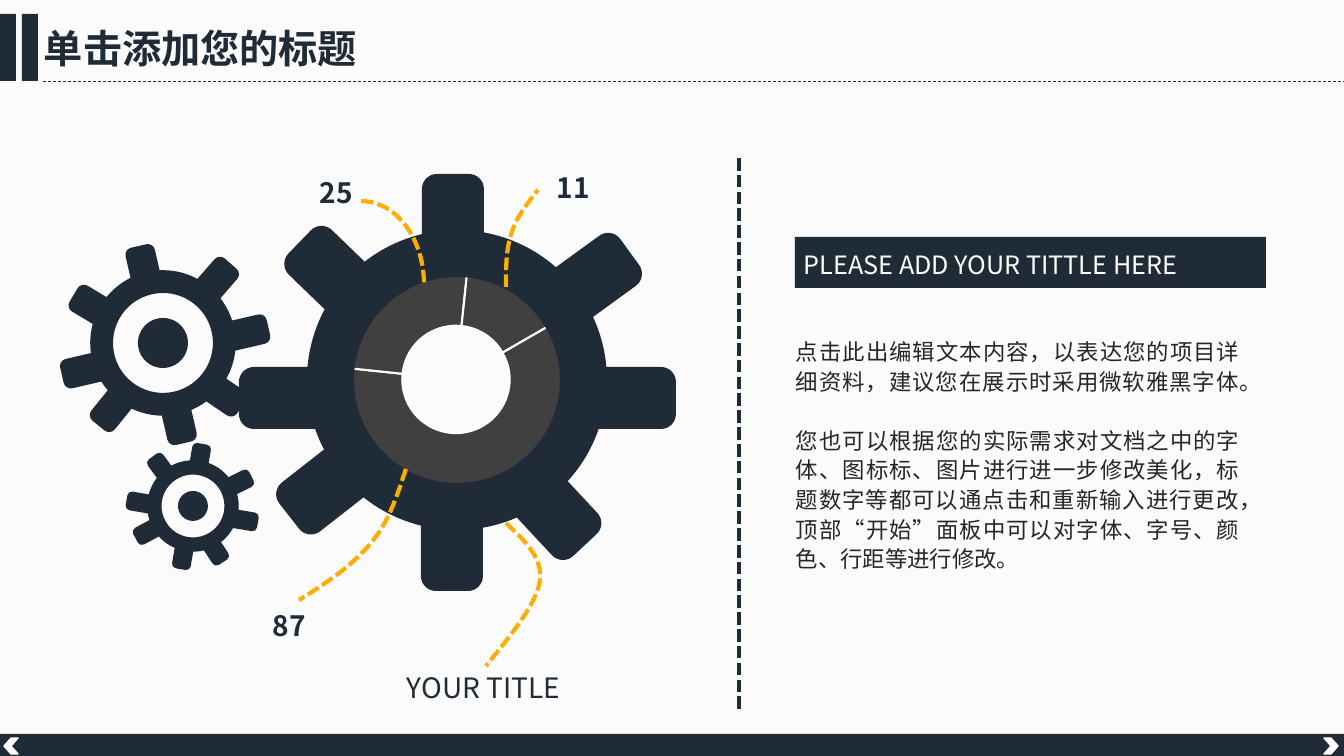
from math import atan2, cos, pi, radians, sin, sqrt, tan

from lxml.etree import SubElement
from pptx import Presentation
from pptx.chart.data import CategoryChartData
from pptx.dml.color import RGBColor
from pptx.enum.chart import XL_CHART_TYPE as Chart
from pptx.enum.dml import MSO_LINE as Dash
from pptx.enum.shapes import MSO_CONNECTOR as Connector, MSO_SHAPE as Shape
from pptx.enum.text import MSO_AUTO_SIZE as AutoSize, PP_ALIGN as Align
from pptx.oxml import parse_xml
from pptx.oxml.ns import nsdecls, qn
from pptx.util import Pt

# Content: lengths in px, 1344 x 756 for the slide
WIDTH, HEIGHT = 1344, 756
PX = 914400 / 100.8
FONT = "Noto Sans CJK SC"
COLORS = {"page": "FBFBFB", "navy": "1F2B37", "amber": "FBAE03",
          "ring": "404040", "white": "FFFFFF", "body": "262626", "black": "000000"}

TITLE = "单击添加您的标题"
HEADING = "PLEASE ADD YOUR TITTLE HERE"
BODY = [
    "点击此出编辑文本内容，以表达您的项目详细资料，建议您在展示时采用微软雅黑字体。",
    "您也可以根据您的实际需求对文档之中的字体、图标标、图片进行进一步修改美化，"
    "标题数字等都可以通点击和重新输入进行更改，顶部“开始”面板中可以对字体、字号、"
    "颜色、行距等进行修改。",
]
LABELS = [("25", 310, 171, 55, True), ("11", 547, 166, 55, True),
          ("87", 263, 604, 55, True), ("YOUR TITLE", 397, 666, 178, False)]
SHARES = [("1", 60), ("2", 25), ("3", 15)]

# Gear: teeth as (angle, sideways offset, reach); gears as (x, y, scale, turn, hub radius)
BODY_RADIUS, HOLE_RADIUS, HALF_TOOTH, TOOTH_CORNER = 150, 103, 31, 15
TEETH = [(0, 18, 219), (47, 19, 208), (90, 5, 211), (142, -4, 216),
         (180, -18, 218), (224, -10, 209), (270, -4, 206), (324, -2, 215)]
GEARS = [(457, 380, 1, 0, 0), (163, 343, 0.485, -13, 25), (193, 506, 0.305, 9.7, 15)]

# Leader lines: a start, then curves of three points each
LEADERS = [
    [[(506, 287)], [(506, 268), (506, 248), (512, 232)], [(517, 216), (528, 203), (538, 190)]],
    [[(406, 469)], [(397, 496), (389, 522), (371, 543)], [(353, 565), (327, 583), (299, 600)]],
    [[(506, 523)], [(524, 540), (543, 557), (540, 581)], [(536, 605), (511, 635), (486, 666)]],
]


def emu(px):
    return round(px * PX)


def color(name):
    return RGBColor.from_string(COLORS[name])


def paint(shape, fill=None, line=None, width=1, dash=None):
    shape.shadow.inherit = False
    if fill:
        shape.fill.solid()
        shape.fill.fore_color.rgb = color(fill)
    else:
        shape.fill.background()
    if line:
        shape.line.color.rgb = color(line)
        shape.line.width = Pt(width)
        shape.line.dash_style = dash
    else:
        shape.line.fill.background()
    return shape


def add_shape(kind, x, y, w, h, **style):
    return paint(page.shapes.add_shape(kind, emu(x), emu(y), emu(w), emu(h)), **style)


def add_line(x1, y1, x2, y2, width, dash):
    line = page.shapes.add_connector(Connector.STRAIGHT, emu(x1), emu(y1), emu(x2), emu(y2))
    line.line.color.rgb = color("navy")
    line.line.width = Pt(width)
    line.line.dash_style = dash
    SubElement(line._element.spPr, qn("a:effectLst"))


def add_text(paragraphs, x, y, w, h, size, ink="navy", bold=False, wrap=True,
             align=None, spacing=None, gap=0):
    box = page.shapes.add_textbox(emu(x), emu(y), emu(w), emu(h))
    frame = box.text_frame
    frame.word_wrap = wrap
    frame.auto_size = AutoSize.SHAPE_TO_FIT_TEXT
    for index, text in enumerate(paragraphs):
        para = frame.add_paragraph() if index else frame.paragraphs[0]
        para.alignment = align
        para.line_spacing = spacing
        if index:
            para.space_before = Pt(gap)
        span = para.add_run()
        span.text = text
        span.font.name, span.font.size, span.font.bold = FONT, Pt(size), bold
        span.font.color.rgb = color(ink)
        SubElement(span._r.get_or_add_rPr(), qn("a:ea"), typeface=FONT)


def add_outline(contours, close, **style):
    """Each contour is a start, then steps: one point for a line, three for a curve."""
    builder = None
    for contour in contours:
        start, *points = [(emu(x), emu(y)) for step in contour for x, y in step]
        if builder:
            builder.move_to(*start)
        else:
            builder = page.shapes.build_freeform(*start, scale=1.0)
        builder.add_line_segments(points, close=close)
    shape = builder.convert_to_shape()
    # Join the three points of each curve into one Bezier segment
    segments = iter(list(shape._element.iter(qn("a:lnTo"))))
    for step in [step for contour in contours for step in contour[1:]]:
        first, *others = [next(segments) for _ in step]
        if others:
            first.tag = qn("a:cubicBezTo")
            for other in others:
                first.append(other[0])
                other.getparent().remove(other)
    return paint(shape, **style)


def arc(x, y, radius, start, end):
    """Curve step along a circle."""
    pull = radius * 4 / 3 * tan((end - start) / 4)
    x1, y1 = x + radius * cos(start), y + radius * sin(start)
    x2, y2 = x + radius * cos(end), y + radius * sin(end)
    return [(x1 - pull * sin(start), y1 + pull * cos(start)),
            (x2 + pull * sin(end), y2 - pull * cos(end)), (x2, y2)]


def turned(step, angle, x=0, y=0, scale=1):
    c, s = scale * cos(radians(angle)), scale * sin(radians(angle))
    return [(x + u * c - v * s, y + u * s + v * c) for u, v in step]


def tooth(angle, offset, reach):
    """Steps from one foot on the gear body, round the tip, to the other foot."""
    low, high, r = offset - HALF_TOOTH, offset + HALF_TOOTH, TOOTH_CORNER
    steps = [[(sqrt(BODY_RADIUS ** 2 - low ** 2), low)],
             [(reach - r, low)], arc(reach - r, low + r, r, -pi / 2, 0),
             [(reach, high - r)], arc(reach - r, high - r, r, 0, pi / 2),
             [(sqrt(BODY_RADIUS ** 2 - high ** 2), high)]]
    return [turned(step, angle) for step in steps]


def gear_contours():
    teeth = [tooth(*item) for item in TEETH]
    rim = []
    for index, current in enumerate(teeth):
        following = teeth[(index + 1) % len(teeth)]
        (x1, y1), (x2, y2) = current[-1][0], following[0][0]
        start, end = atan2(y1, x1), atan2(y2, x2)
        # The arc before a tooth already ends at its first foot
        rim += current[1:] if index else current
        rim.append(arc(0, 0, BODY_RADIUS, start, start + (end - start) % (2 * pi)))
    quarters = [arc(0, 0, HOLE_RADIUS, -n * pi / 2, -(n + 1) * pi / 2) for n in range(4)]
    return [rim, [[(HOLE_RADIUS, 0)]] + quarters]


def add_ring():
    data = CategoryChartData()
    data.categories = [name for name, _ in SHARES]
    data.add_series("Series 1", [value for _, value in SHARES])
    chart = page.shapes.add_chart(Chart.DOUGHNUT, emu(277), emu(260), emu(358), emu(239), data).chart
    chart.has_legend = chart.has_title = False
    chart.font.name, chart.font.size = FONT, Pt(10)
    chart.font.color.rgb = color("black")
    plot = chart.plots[0]
    plot.vary_by_categories = False
    for index in range(len(SHARES)):
        part = plot.series[0].points[index].format
        part.fill.solid()
        part.fill.fore_color.rgb = color("ring")
        part.line.color.rgb = color("white")
        part.line.width = Pt(1.5)
    ring = plot._element
    ring.find(qn("c:firstSliceAng")).set("val", "60")
    ring.find(qn("c:holeSize")).set("val", "56")
    area = ring.getparent()
    for old in area.findall(qn("c:layout")):
        area.remove(old)
    frame = "".join(f'<c:{key} val="{value}"/>' for key, value in [
        ("layoutTarget", "inner"), ("xMode", "edge"), ("yMode", "edge"),
        ("x", 0.2), ("y", 0.05), ("w", 0.6), ("h", 0.9)])
    area.insert(0, parse_xml(f'<c:layout {nsdecls("c")}><c:manualLayout>{frame}'
                             '</c:manualLayout></c:layout>'))


deck = Presentation()
deck.slide_width, deck.slide_height = emu(WIDTH), emu(HEIGHT)
page = deck.slides.add_slide(deck.slide_layouts[6])

# Backdrop, title bar and footer
add_shape(Shape.RECTANGLE, 0, 0, WIDTH, HEIGHT, fill="page")
add_line(43, 81, WIDTH, 81, 0.5, Dash.DASH)
for x in (0, 22):
    add_shape(Shape.RECTANGLE, x, 14, 16, 67, fill="navy")
add_text([TITLE], 34, 19, 411, 57, 28, bold=True)
add_shape(Shape.RECTANGLE, 0, 734, WIDTH, 22, fill="navy")
for x, turn in ((1324, 0), (4, 180)):
    add_shape(Shape.CHEVRON, x, 738, 14, 16, fill="white", line="white").rotation = turn

# Ring chart seen through the big gear, then the gears
add_ring()
contours = gear_contours()
for x, y, scale, turn, hub in GEARS:
    add_outline([[turned(step, turn, x, y, scale) for step in contour] for contour in contours],
                True, fill="navy")
    if hub:
        add_shape(Shape.OVAL, x - hub, y - hub, 2 * hub, 2 * hub, fill="navy")

# Divider, leader lines and their labels
add_line(739, 709, 739, 155, 3, Dash.SQUARE_DOT)
leader_style = {"line": "amber", "width": 3, "dash": Dash.SQUARE_DOT}
add_shape(Shape.ARC, 298, 201, 126, 166, **leader_style)
for leader in LEADERS:
    add_outline([leader], False, **leader_style)
for text, x, y, w, bold in LABELS:
    add_text([text], x, y, w, 44, 20, bold=bold, wrap=False)

# Text column
add_shape(Shape.RECTANGLE, 795, 237, 471, 51, fill="navy")
add_text([HEADING], 794, 244, 483, 40, 18, ink="white")
add_text(BODY, 786, 331, 464, 249, 16, ink="body", align=Align.JUSTIFY, spacing=1.1, gap=21)

deck.save("out.pptx")
